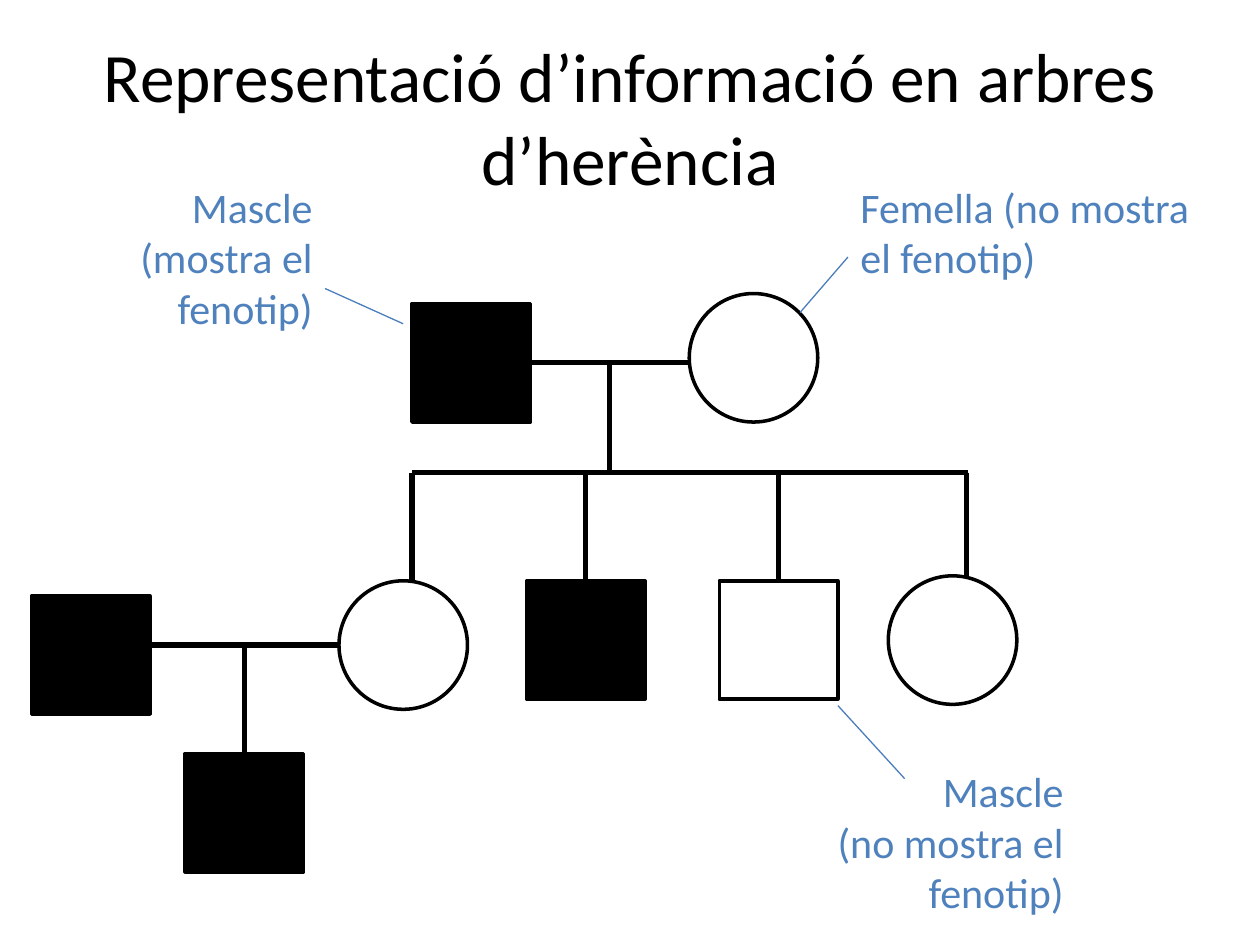
from lxml.etree import SubElement
from pptx import Presentation
from pptx.dml.color import RGBColor
from pptx.enum.shapes import MSO_CONNECTOR, MSO_SHAPE
from pptx.enum.text import MSO_ANCHOR, PP_ALIGN
from pptx.oxml.ns import qn
from pptx.util import Inches, Pt

BLACK = RGBColor(0x00, 0x00, 0x00)
WHITE = RGBColor(0xFF, 0xFF, 0xFF)
BLUE = RGBColor(0x4F, 0x81, 0xBD)
LEADER = RGBColor(0x4B, 0x7E, 0xBC)
FONT = "Calibri"
MALE, FEMALE = 0.94, 1.02  # symbol sizes
SIBLING_Y, CHILD_Y = 3.75, 4.61
TOP, RIGHT = 0, 3  # connection sites of a rectangle


def write(tf, *lines, size=24, color=BLUE, align=PP_ALIGN.LEFT):
    tf.word_wrap = True
    for i, line in enumerate(lines):
        p = tf.paragraphs[0] if i == 0 else tf.add_paragraph()
        p.alignment = align
        r = p.add_run()
        r.text = line
        r.font.name = FONT
        r.font.size = Pt(size)
        r.font.color.rgb = color


def add_label(s, x, y, w, h, *lines, align=PP_ALIGN.RIGHT):
    box = s.shapes.add_textbox(Inches(x), Inches(y), Inches(w), Inches(h))
    write(box.text_frame, *lines, align=align)


def add_symbol(s, kind, x, y, size, fill):
    sp = s.shapes.add_shape(kind, Inches(x), Inches(y), Inches(size), Inches(size))
    sp.shadow.inherit = False
    sp.fill.solid()
    sp.fill.fore_color.rgb = fill
    sp.line.color.rgb = BLACK
    sp.line.width = Pt(2)
    return sp


def add_male(s, x, y, fill=BLACK):
    return add_symbol(s, MSO_SHAPE.RECTANGLE, x, y, MALE, fill)


def add_female(s, x, y):
    return add_symbol(s, MSO_SHAPE.OVAL, x, y, FEMALE, WHITE)


def add_line(s, x1, y1, x2, y2, color=BLACK, width=3):
    line = s.shapes.add_connector(
        MSO_CONNECTOR.STRAIGHT, Inches(x1), Inches(y1), Inches(x2), Inches(y2))
    line.line.color.rgb = color
    line.line.width = Pt(width)
    SubElement(line._element.spPr, qn("a:effectLst"))
    return line


def add_descent(s, x, y, child=None):
    """Vertical line down to a child, joined to it if it is a square."""
    line = add_line(s, x, y, x, y + 0.86)
    if child is not None:
        line.end_connect(child, TOP)


def main():
    prs = Presentation()
    prs.slide_width, prs.slide_height = Inches(10), Inches(7.5)
    s = prs.slides.add_slide(prs.slide_layouts[5])

    # Title
    title = s.shapes.title
    title.left, title.top = Inches(0.5), Inches(0.3)
    title.width, title.height = Inches(9), Inches(1.25)
    title.text_frame.vertical_anchor = MSO_ANCHOR.MIDDLE
    write(title.text_frame, "Representació d’informació en arbres d’herència",
          size=39.6, color=BLACK, align=PP_ALIGN.CENTER)

    # First generation
    father = add_male(s, 3.27, 2.41)
    couple = add_line(s, 4.21, 2.88, 5.71, 2.88)
    couple.begin_connect(father, RIGHT)
    add_female(s, 5.47, 2.33)
    add_line(s, 4.84, 2.89, 4.84, SIBLING_Y)

    # Second generation
    add_line(s, 3.27, SIBLING_Y, 7.68, SIBLING_Y)
    add_female(s, 2.69, CHILD_Y)
    for x in (3.27, 7.67):
        add_descent(s, x, SIBLING_Y)
    for left, fill in ((4.18, BLACK), (5.71, WHITE)):
        son = add_male(s, left, CHILD_Y, fill)
        add_descent(s, left + MALE / 2, SIBLING_Y, son)
    add_female(s, 7.05, 4.57)

    # Eldest daughter's partner and third generation
    add_line(s, 1.19, 5.12, 2.69, 5.12)
    add_male(s, 0.25, 4.73)
    grandson = add_male(s, 1.47, 5.98)
    add_descent(s, 1.94, 5.12, grandson)

    # Labels with leader lines
    add_label(s, 6.73, 1.39, 3.08, 0.91, "Femella (no mostra el fenotip)",
              align=PP_ALIGN.LEFT)
    add_label(s, 0.02, 1.39, 2.56, 1.31, "Mascle", "(mostra el fenotip)")
    add_label(s, 5.98, 6.03, 2.56, 1.31, "Mascle", "(no mostra el fenotip)")
    for ends in ((2.58, 2.29, 3.2, 2.57), (6.73, 2.04, 6.35, 2.48),
                 (7.18, 6.18, 6.65, 5.6)):
        add_line(s, *ends, color=LEADER, width=0.75)

    prs.save("out.pptx")


if __name__ == "__main__":
    main()
